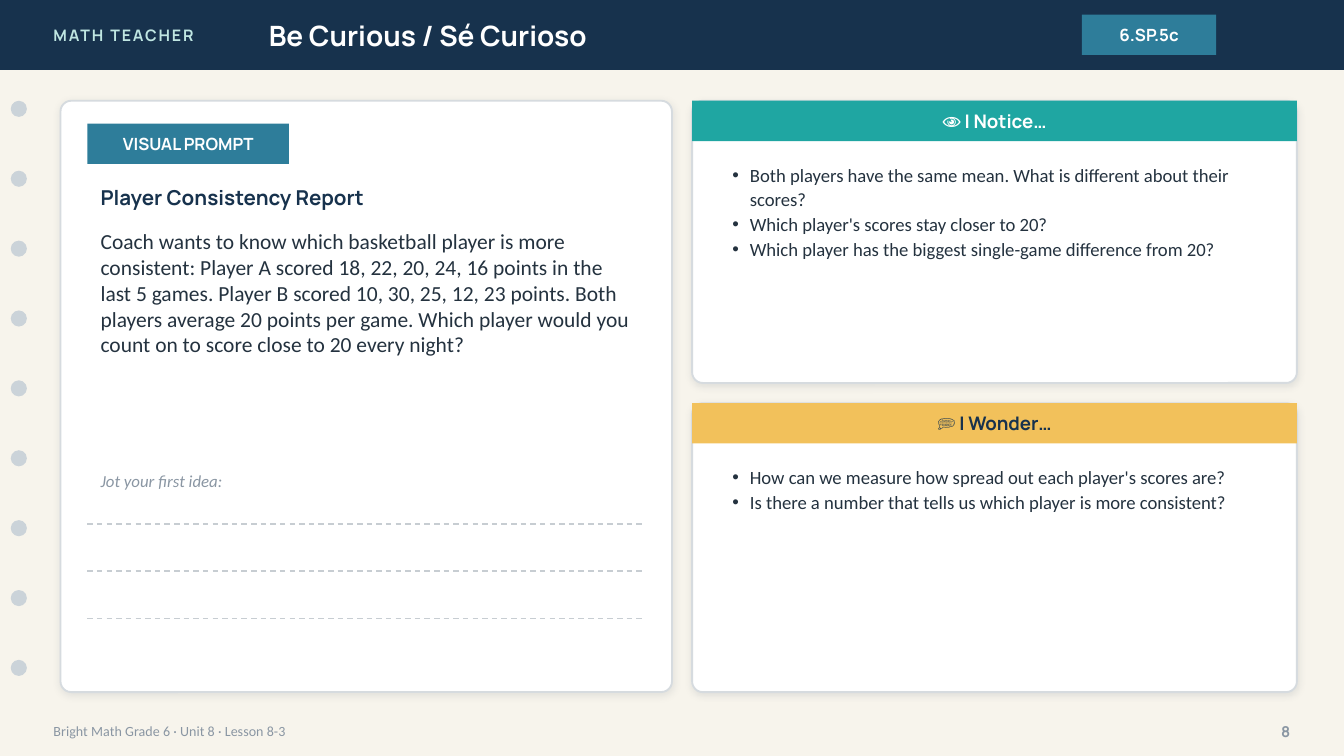
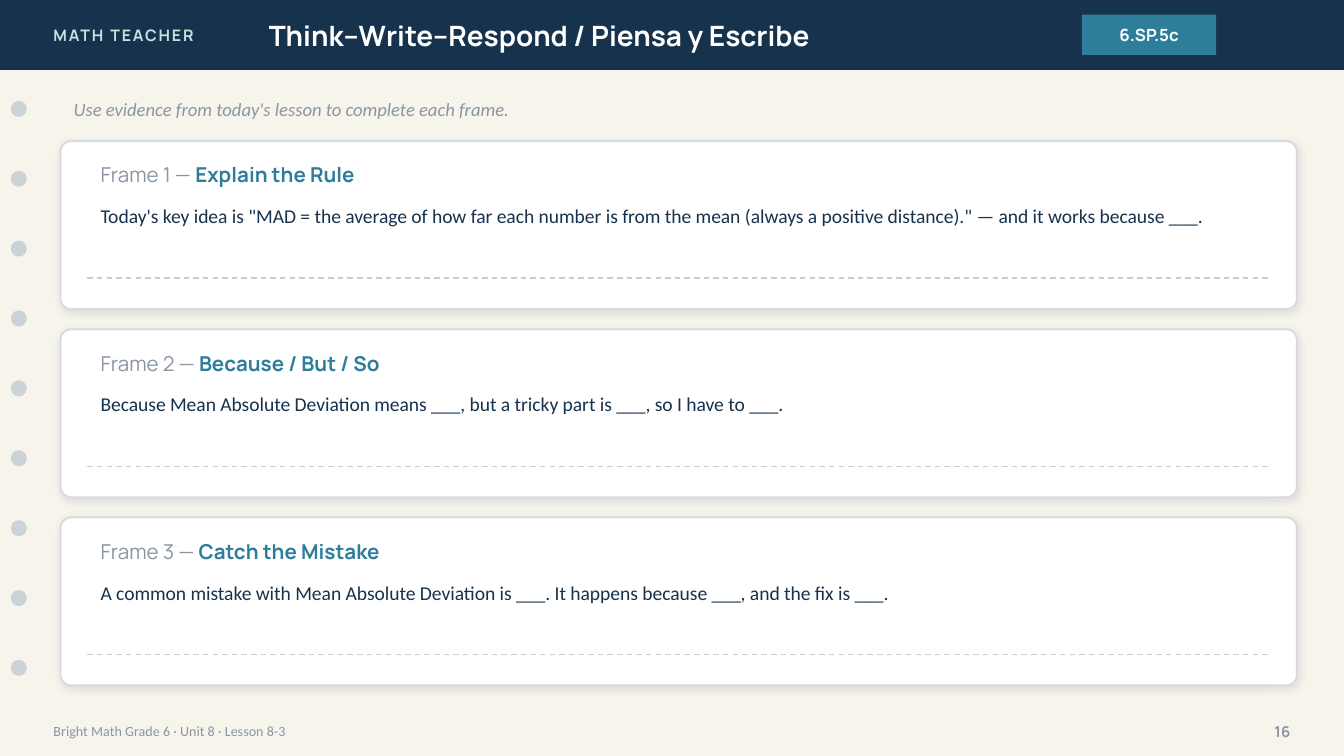
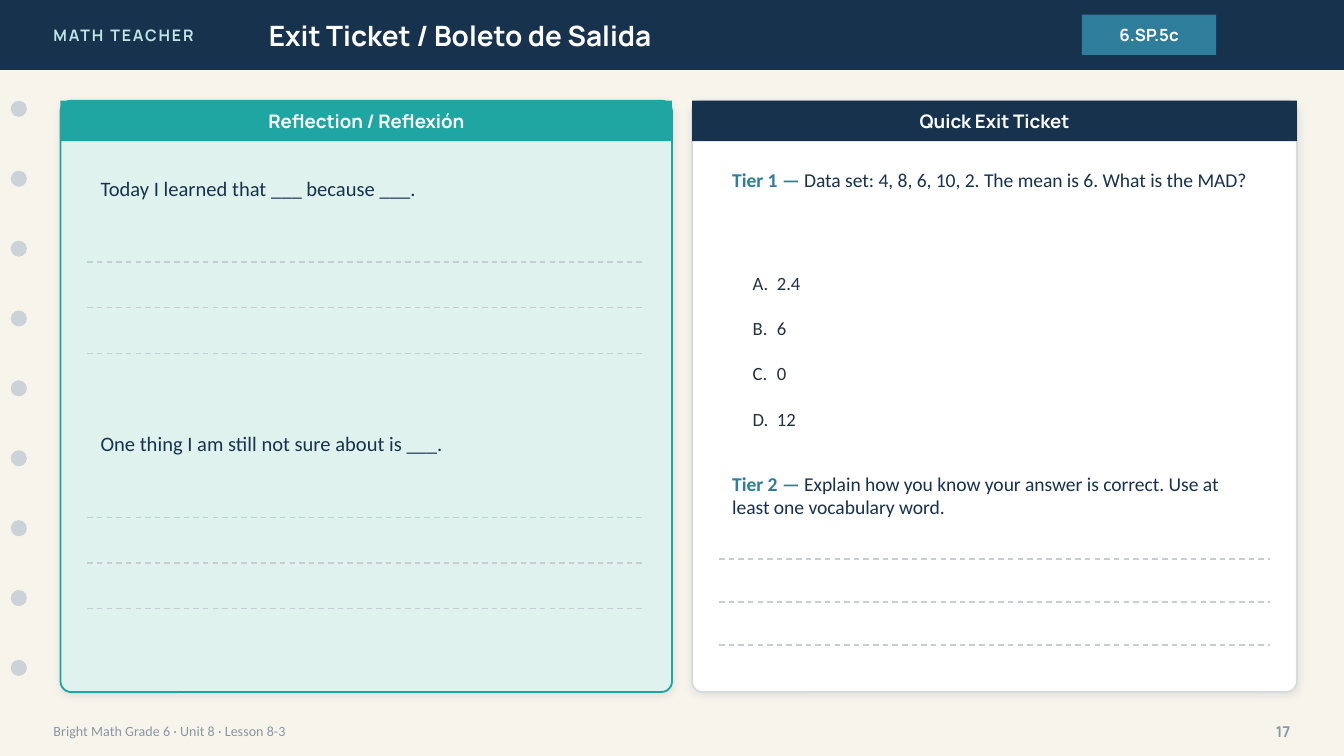
from lxml import etree
from pptx import Presentation
from pptx.dml.color import RGBColor
from pptx.enum import dml, shapes, text
from pptx.oxml import ns
from pptx.util import Inches, Pt

NAVY = RGBColor(0x17, 0x32, 0x4D)
BLUE = RGBColor(0x2E, 0x7D, 0x9A)
TEAL = RGBColor(0x1F, 0xA6, 0xA2)
MINT = RGBColor(0xDF, 0xF2, 0xEE)
AQUA = RGBColor(0xBF, 0xE6, 0xE2)
GOLD = RGBColor(0xF2, 0xC1, 0x5B)
CREAM = RGBColor(0xF7, 0xF4, 0xEC)
WHITE = RGBColor(0xFF, 0xFF, 0xFF)
INK = RGBColor(0x24, 0x32, 0x3F)
GRAY = RGBColor(0x8A, 0x96, 0xA3)
DOT = RGBColor(0xCB, 0xD3, 0xD9)
RULE = RGBColor(0xC7, 0xCD, 0xD2)
BORDER = RGBColor(0xD6, 0xDB, 0xDF)
SHADOW = RGBColor(0x1C, 0x2E, 0x42)

HEAD = "Manrope"
BODY = "Calibri"
RECT = shapes.MSO_SHAPE.RECTANGLE
MIDDLE = text.MSO_ANCHOR.MIDDLE
TOP = text.MSO_ANCHOR.TOP
LEFT, CENTER, RIGHT = text.PP_ALIGN.LEFT, text.PP_ALIGN.CENTER, text.PP_ALIGN.RIGHT

BRAND = "MATH TEACHER"
STANDARD = "6.SP.5c"
FOOTER = "Bright Math Grade 6 · Unit 8 · Lesson 8-3"
LEFT_PANEL = (0.45, 0.75, 4.55, 4.4)
RIGHT_PANEL = (5.15, 0.75, 4.5, 4.4)
PAD = 0.2


def sub(parent, tag, **attrs):
    return etree.SubElement(parent, ns.qn(tag), attrs)


def format_run(r, size, color, font=BODY, bold=False, italic=False):
    f = r.font
    f.size, f.name, f.bold, f.italic = Pt(size), font, bold, italic
    f.color.rgb = color


def format_frame(tf, anchor=MIDDLE, align=LEFT, **style):
    tf.word_wrap = True
    tf.auto_size = text.MSO_AUTO_SIZE.NONE
    tf.vertical_anchor = anchor
    for p in tf.paragraphs:
        p.alignment = align
        for r in p.runs:
            format_run(r, **style)


def add_text(s, box, words, **style):
    sp = s.shapes.add_textbox(*map(Inches, box))
    sp.text_frame.text = words
    format_frame(sp.text_frame, **style)
    return sp


def add_labelled(s, box, label, label_style, words, words_style, anchor=TOP):
    sp = add_text(s, box, label + " — ", anchor=anchor, **label_style)
    r = sp.text_frame.paragraphs[0].add_run()
    r.text = words
    format_run(r, **words_style)


def add_block(s, box, fill, kind=RECT):
    sp = s.shapes.add_shape(kind, *map(Inches, box))
    sp.shadow.inherit = False
    sp.fill.solid()
    sp.fill.fore_color.rgb = fill
    sp.line.fill.background()
    return sp


def add_label(s, box, words, fill, size=9, color=WHITE):
    sp = add_block(s, box, fill)
    sp.text_frame.text = words
    format_frame(sp.text_frame, align=CENTER, size=size, color=color, font=HEAD, bold=True)


def add_card(s, box, fill=WHITE, border=BORDER):
    sp = add_block(s, box, fill, shapes.MSO_SHAPE.ROUNDED_RECTANGLE)
    sp.adjustments[0] = 0.08 / min(box[2:])
    sp.line.color.rgb = border
    sp.line.width = Pt(1)
    effects = sp.element.spPr.find(ns.qn("a:effectLst"))
    shadow = sub(effects, "a:outerShdw", blurRad=str(Pt(4)), dist=str(Pt(1)),
                 dir="5400000", algn="ctr", rotWithShape="0")
    color = sub(shadow, "a:srgbClr", val=str(SHADOW))
    sub(color, "a:alpha", val="10000")


def add_panel(s, box, heading, band, color=WHITE, fill=WHITE, border=BORDER):
    x, y, w, h = box
    add_card(s, box, fill, border)
    add_label(s, (x, y, w, 0.3), heading, band, size=10, color=color)


def add_writing_lines(s, x, y, w, count=1, gap=0.0):
    for i in range(count):
        line_y = Inches(y + i * gap)
        ln = s.shapes.add_connector(shapes.MSO_CONNECTOR.STRAIGHT,
                                    Inches(x), line_y, Inches(x + w), line_y)
        ln.line.color.rgb = RULE
        ln.line.width = Pt(0.75)
        ln.line.dash_style = dml.MSO_LINE.DASH
        sub(ln.element.spPr, "a:effectLst")


def place(sp, box):
    sp.left, sp.top, sp.width, sp.height = map(Inches, box)
    tree = sp.element.getparent()
    tree.remove(sp.element)
    tree.append(sp.element)


def fill_list(sp, box, items, indent, bullet, anchor=TOP, line_spacing=1.0, gap=0):
    place(sp, box)
    tf = sp.text_frame
    tf.text = "\n".join(items)
    tag, attrs = bullet
    for i, p in enumerate(tf.paragraphs):
        pPr = p._p.get_or_add_pPr()
        pPr.set("marL", str(Inches(indent)))
        pPr.set("indent", str(-Inches(indent)))
        sub(pPr, tag, **attrs)
        p.line_spacing = line_spacing
        p.space_before = Pt(gap if i else 0)
    format_frame(tf, anchor=anchor, size=10, color=INK)


def new_slide(prs, layout, title, number):
    s = prs.slides.add_slide(prs.slide_layouts.get_by_name(layout))
    s.background.fill.solid()
    s.background.fill.fore_color.rgb = CREAM
    add_block(s, (0, 0, 10, 0.52), NAVY)
    brand = add_text(s, (0.3, 0, 2.4, 0.52), BRAND, size=8.5, color=AQUA, font=HEAD, bold=True)
    brand.text_frame.paragraphs[0].runs[0].font._element.set("spc", "100")
    place(s.shapes.title, (1.9, 0, 5.6, 0.52))
    s.shapes.title.text_frame.text = title
    format_frame(s.shapes.title.text_frame, size=15, color=WHITE, font=HEAD, bold=True)
    add_label(s, (8.05, 0.11, 1, 0.3), STANDARD, BLUE)
    for i in range(9):
        add_block(s, (0.08, 0.75 + i * 0.52, 0.12, 0.12), DOT, shapes.MSO_SHAPE.OVAL)
    add_text(s, (0.3, 5.3, 7, 0.28), FOOTER, size=7.5, color=GRAY)
    add_text(s, (9.2, 5.3, 0.5, 0.28), str(number), align=RIGHT,
             size=8, color=GRAY, font=HEAD, bold=True)
    return s


def add_visual_prompt(s, box, heading, story):
    x, y, w, h = box
    left, width = x + PAD, w - 2 * PAD
    add_card(s, box)
    add_label(s, (left, y + 0.17, 1.5, 0.3), "VISUAL PROMPT", BLUE)
    add_text(s, (left, y + 0.57, width, 0.3), heading, size=11, color=NAVY, font=HEAD, bold=True)
    add_text(s, (left, y + 0.9, width, 1.7), story, anchor=TOP, size=11.5, color=INK)
    add_text(s, (left, y + 2.7, 4, 0.25), "Jot your first idea:", size=9, color=GRAY, italic=True)
    add_writing_lines(s, left, y + 3.15, width, 3, 0.35)


def add_question_panel(s, sp, box, heading, band, color, questions):
    x, y, w, h = box
    add_panel(s, box, heading, band, color)
    fill_list(sp, (x + PAD, y + 0.4, w - 2 * PAD, h - 0.5), questions, 0.13,
              ("a:buChar", {"char": "•"}), line_spacing=1.1)


def add_frame(s, box, number, name, sentence):
    x, y, w, h = box
    left, width = x + PAD, w - 2 * PAD
    add_card(s, box)
    add_labelled(s, (left, y + 0.1, width, 0.3),
                 f"Frame {number}", dict(size=11, color=GRAY, font=HEAD),
                 name, dict(size=11, color=BLUE, font=HEAD, bold=True), anchor=MIDDLE)
    add_text(s, (left, y + 0.42, width, 0.4), sentence, anchor=TOP, size=10.5, color=NAVY)
    add_writing_lines(s, left, y + 1.02, width)


def add_reflection(s, box, starters):
    x, y, w, h = box
    left, width = x + PAD, w - 2 * PAD
    add_panel(s, box, "Reflection / Reflexión", TEAL, fill=MINT, border=TEAL)
    for i, starter in enumerate(starters):
        top = y + 0.45 + i * 1.9
        add_text(s, (left, top, width, 0.4), starter, size=11, color=NAVY)
        add_writing_lines(s, left, top + 0.75, width, 3, 0.34)


def add_exit_ticket(s, sp, box, question, choices, follow_up):
    x, y, w, h = box
    left, width = x + PAD, w - 2 * PAD
    label_style = dict(size=10.5, color=BLUE, bold=True)
    words_style = dict(size=10.5, color=NAVY)
    add_panel(s, box, "Quick Exit Ticket", NAVY)
    add_labelled(s, (left, y + 0.45, width, 0.7), "Tier 1", label_style, question, words_style)
    fill_list(sp, (x + 0.35, y + 1.2, w - 0.6, 1.32), choices, 0.18,
              ("a:buAutoNum", {"type": "alphaUcPeriod"}), anchor=MIDDLE, gap=12.3)
    add_labelled(s, (left, y + 2.71, width, 0.55), "Tier 2", label_style, follow_up, words_style)
    add_writing_lines(s, left, y + 3.41, width, 3, 0.32)


def build_curious(prs):
    s = new_slide(prs, "Two Content", "Be Curious / Sé Curioso", 8)
    add_visual_prompt(s, LEFT_PANEL, "Player Consistency Report",
                      "Coach wants to know which basketball player is more consistent: "
                      "Player A scored 18, 22, 20, 24, 16 points in the last 5 games. "
                      "Player B scored 10, 30, 25, 12, 23 points. "
                      "Both players average 20 points per game. "
                      "Which player would you count on to score close to 20 every night?")
    x, y, w, h = RIGHT_PANEL
    add_question_panel(s, s.placeholders[1], (x, y, w, 2.1), "👁 I Notice…", TEAL, WHITE, [
        "Both players have the same mean. What is different about their scores?",
        "Which player's scores stay closer to 20?",
        "Which player has the biggest single-game difference from 20?"])
    add_question_panel(s, s.placeholders[2], (x, y + 2.25, w, 2.15), "💭 I Wonder…", GOLD, NAVY, [
        "How can we measure how spread out each player's scores are?",
        "Is there a number that tells us which player is more consistent?"])


def build_write(prs):
    s = new_slide(prs, "Title Only", "Think–Write–Respond / Piensa y Escribe", 16)
    add_text(s, (0.45, 0.66, 9.2, 0.3), "Use evidence from today's lesson to complete each frame.",
             size=10, color=GRAY, italic=True)
    frames = [
        ("Explain the Rule",
         "Today's key idea is \"MAD = the average of how far each number is from the mean "
         "(always a positive distance).\" — and it works because ___."),
        ("Because / But / So",
         "Because Mean Absolute Deviation means ___, but a tricky part is ___, so I have to ___."),
        ("Catch the Mistake",
         "A common mistake with Mean Absolute Deviation is ___. "
         "It happens because ___, and the fix is ___."),
    ]
    for i, (name, sentence) in enumerate(frames):
        add_frame(s, (0.45, 1.05 + i * 1.4, 9.2, 1.25), i + 1, name, sentence)


def build_exit(prs):
    s = new_slide(prs, "Title and Content", "Exit Ticket / Boleto de Salida", 17)
    add_reflection(s, LEFT_PANEL, ["Today I learned that ___ because ___.",
                                   "One thing I am still not sure about is ___."])
    add_exit_ticket(s, s.placeholders[1], RIGHT_PANEL,
                    "Data set: 4, 8, 6, 10, 2. The mean is 6. What is the MAD?",
                    ["2.4", "6", "0", "12"],
                    "Explain how you know your answer is correct. "
                    "Use at least one vocabulary word.")


def main():
    prs = Presentation()
    prs.slide_width = Inches(10)
    prs.slide_height = prs.slide_width * 9 // 16
    build_curious(prs)
    build_write(prs)
    build_exit(prs)
    prs.save("out.pptx")


if __name__ == "__main__":
    main()
